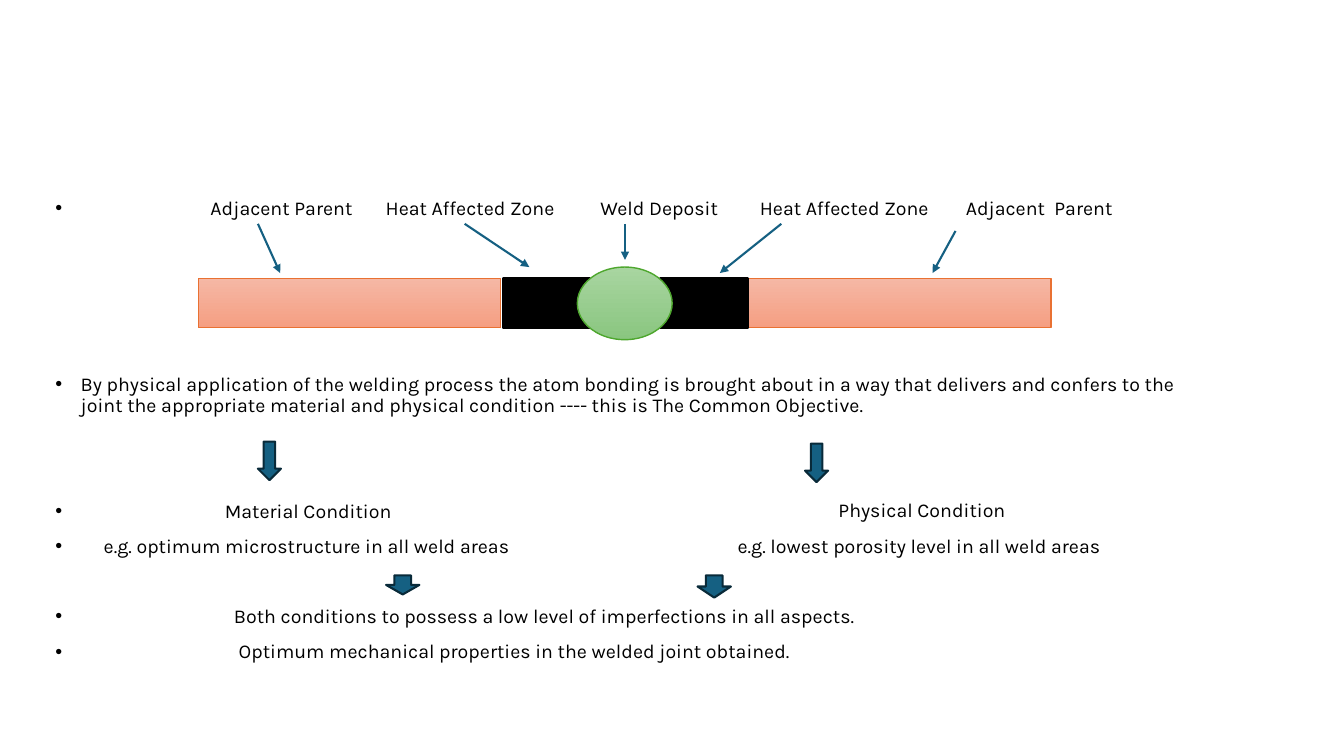
from lxml.etree import SubElement
from pptx import Presentation
from pptx.dml.color import RGBColor
from pptx.enum.shapes import MSO_CONNECTOR as Connector, MSO_SHAPE as Shape
from pptx.enum.text import MSO_ANCHOR as Anchor, MSO_AUTO_SIZE as AutoSize
from pptx.oxml.ns import qn
from pptx.util import Cm, Pt

COLORS = {
    "text": "000000",
    "parent": ("F5B8A5", "F59E82"), "parent_line": "E97132",
    "heat_zone": "000000",
    "deposit": ("A8D5A0", "8AC680"), "deposit_line": "4EA72E",
    "arrow": "156082", "arrow_line": "092A39",
}
LINE_PITCH = 25.1  # one 14 pt line plus the gap before it, in points
GAP = 10

# text, indent in cm, lines left free above for the drawing
BULLETS = [
    ("Adjacent Parent", 3.91, 0),
    ("By physical application of the welding process the atom bonding is brought "
     "about in a way that delivers and confers to the joint the appropriate material "
     "and physical condition ---- this is The Common Objective.", 0.64, 4),
    ("Material Condition", 4.27, 2),
    ("e.g. optimum microstructure in all weld areas", 1.22, 0),
    ("Both conditions to possess a low level of imperfections in all aspects.", 4.5, 1),
    ("Optimum mechanical properties in the welded joint obtained.", 4.62, 0),
]
# text, left, top, width in cm
LABELS = [
    ("Heat Affected Zone", 9.72, 5, 4.6),
    ("Weld Deposit", 15.13, 5, 3.5),
    ("Heat Affected Zone", 19.15, 5, 4.6),
    ("Adjacent  Parent", 24.34, 5, 4.6),
    ("Physical Condition", 21.13, 12.62, 4.6),
    ("e.g. lowest porosity level in all weld areas", 18.59, 13.51, 10.5),
]
POINTERS = [
    (6.5, 5.64, 7.06, 6.88),
    (11.71, 5.64, 13.34, 6.73),
    (15.75, 5.64, 15.75, 6.55),
    (19.69, 5.64, 18.14, 6.88),
    (24.08, 5.82, 23.5, 6.88),
]
DOWN_ARROWS = [
    (6.5, 11.13, 0.58, 0.97),
    (20.29, 11.18, 0.58, 0.97),
    (9.73, 14.5, 0.84, 0.48),
    (17.58, 14.5, 0.84, 0.56),
]


def rgb(name):
    return RGBColor.from_string(COLORS[name])


def write(paragraph, text, size=14, font="Karla", color="text", before=0):
    paragraph.text = text
    paragraph.line_spacing = 0.9
    paragraph.space_before = Pt(before)
    paragraph.space_after = Pt(0)
    paragraph.font.size = Pt(size)
    paragraph.font.name = font
    paragraph.font.color.rgb = rgb(color)


class WeldSlide:
    """Holds the slide and draws each kind of element in its style."""

    def __init__(self, presentation):
        self.slide = presentation.slides.add_slide(presentation.slide_layouts[1])
        title = self.slide.shapes.title.element
        title.getparent().remove(title)

    def body(self, bullets, left, top, width, height):
        """Fill the body list; each bullet hangs at the left edge of the frame."""
        body = self.slide.placeholders[1]
        body.left, body.top = Cm(left), Cm(top)
        body.width, body.height = Cm(width), Cm(height)
        frame = body.text_frame
        frame.auto_size = AutoSize.NONE
        frame.vertical_anchor = Anchor.TOP
        for index, (text, indent, free_lines) in enumerate(bullets):
            paragraph = frame.add_paragraph() if index else frame.paragraphs[0]
            write(paragraph, text, before=GAP + free_lines * LINE_PITCH)
            properties = paragraph._p.get_or_add_pPr()
            properties.set("marL", str(Cm(indent)))
            properties.set("indent", str(-Cm(indent)))

    def label(self, text, left, top, width):
        box = self.slide.shapes.add_textbox(Cm(left), Cm(top), Cm(width), Cm(0.6))
        frame = box.text_frame
        frame.word_wrap = True
        frame.margin_left = frame.margin_right = 0
        frame.margin_top = frame.margin_bottom = 0
        write(frame.paragraphs[0], text)

    def block(self, kind, left, top, width, height, fill, line, weight):
        """Draw a shape; a pair of colours gives a gradient from top to bottom."""
        shape = self.slide.shapes.add_shape(
            kind, Cm(left), Cm(top), Cm(width), Cm(height))
        shape.shadow.inherit = False
        if isinstance(COLORS[fill], tuple):
            shape.fill.gradient()
            shape.fill.gradient_angle = 270
            for stop, color in zip(shape.fill.gradient_stops, COLORS[fill]):
                stop.color.rgb = RGBColor.from_string(color)
        else:
            shape.fill.solid()
            shape.fill.fore_color.rgb = rgb(fill)
        shape.line.color.rgb = rgb(line)
        shape.line.width = Pt(weight)

    def pointer(self, *ends):
        connector = self.slide.shapes.add_connector(
            Connector.STRAIGHT, *(Cm(value) for value in ends))
        connector.line.color.rgb = rgb("arrow")
        connector.line.width = Pt(1.5)
        SubElement(connector.line._get_or_add_ln(), qn("a:tailEnd"), type="triangle")
        SubElement(connector.element.spPr, qn("a:effectLst"))


def main():
    presentation = Presentation()
    presentation.slide_width, presentation.slide_height = Cm(33.87), Cm(19.05)
    weld = WeldSlide(presentation)
    weld.body(BULLETS, 1.14, 4.88, 29.21, 12.32)
    for label in LABELS:
        weld.label(*label)
    for left in (5, 18.87):
        weld.block(Shape.RECTANGLE, left, 7.02, 7.62, 1.24, "parent", "parent_line", 1)
    for left in (12.67, 16.64):
        weld.block(Shape.RECTANGLE, left, 7.02, 2.21, 1.24, "heat_zone", "heat_zone", 1.5)
    weld.block(Shape.OVAL, 14.55, 6.73, 2.39, 1.83, "deposit", "deposit_line", 1)
    for ends in POINTERS:
        weld.pointer(*ends)
    for bounds in DOWN_ARROWS:
        weld.block(Shape.DOWN_ARROW, *bounds, "arrow", "arrow_line", 1.5)
    presentation.save("out.pptx")


if __name__ == "__main__":
    main()
